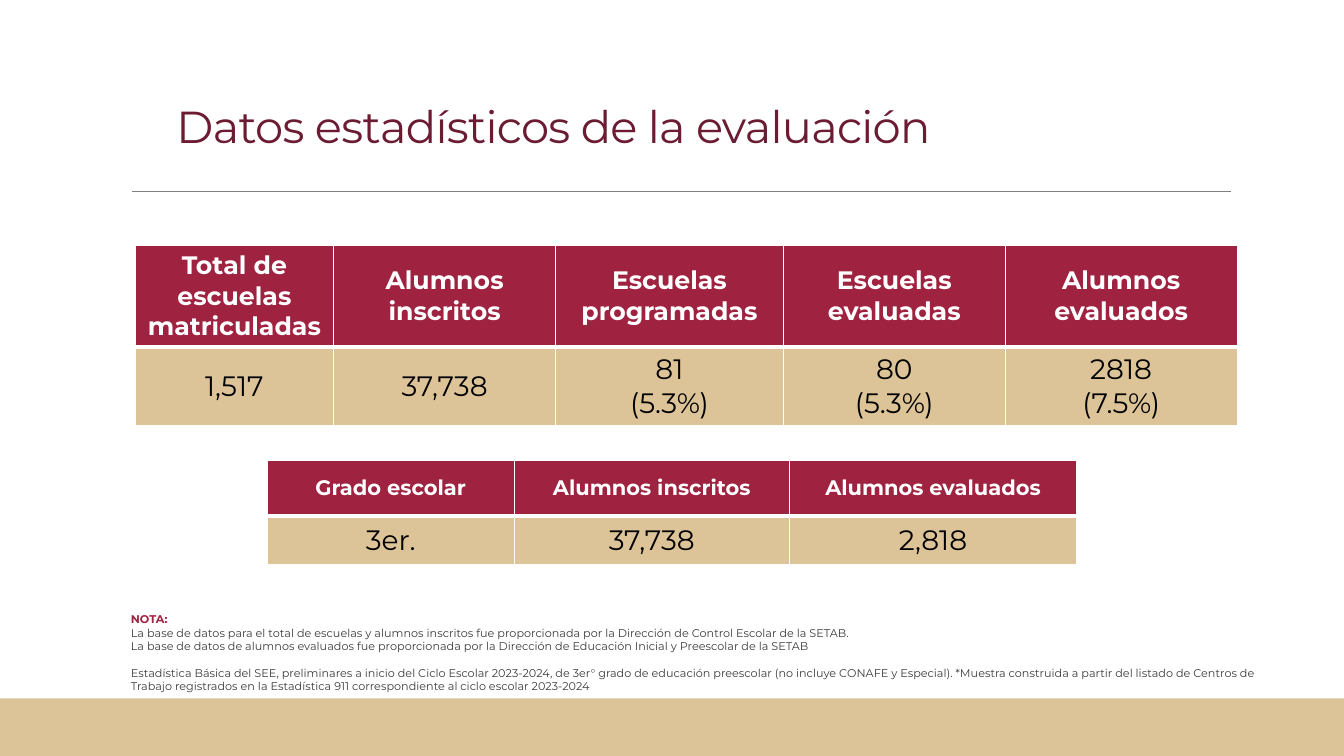
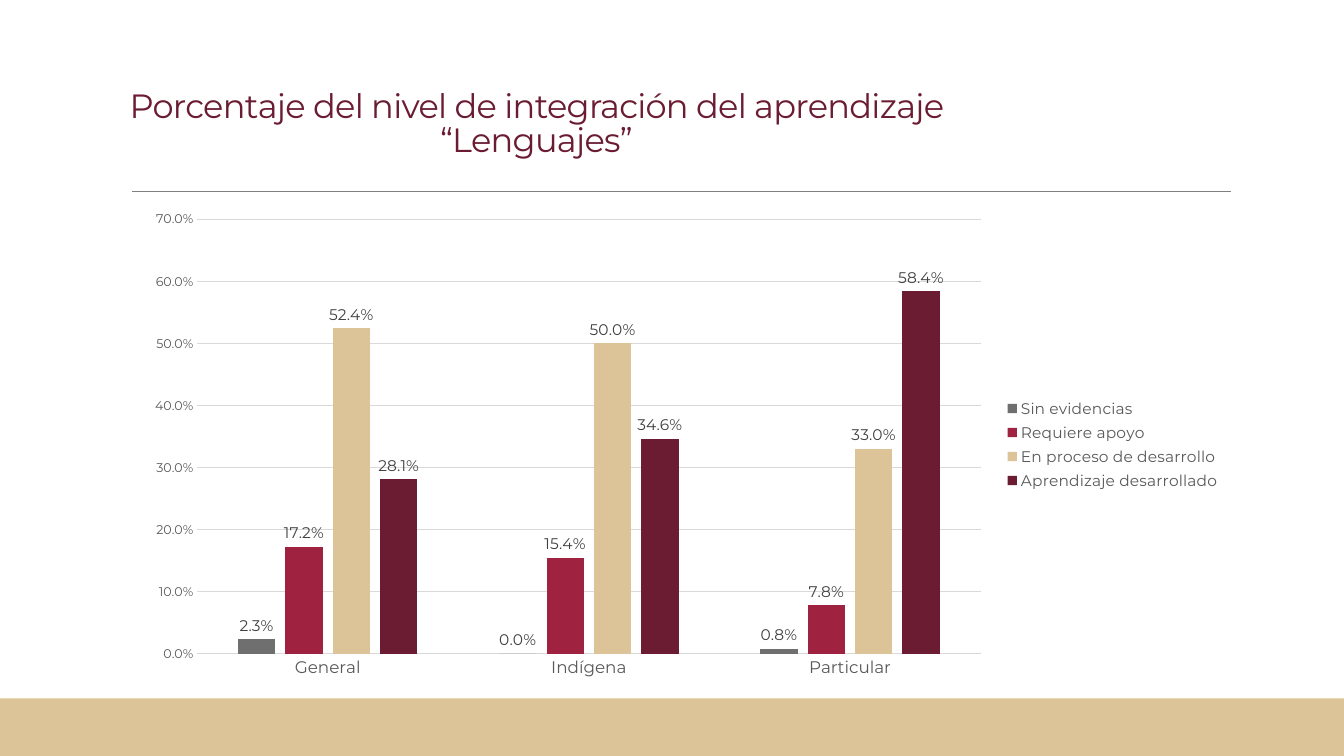
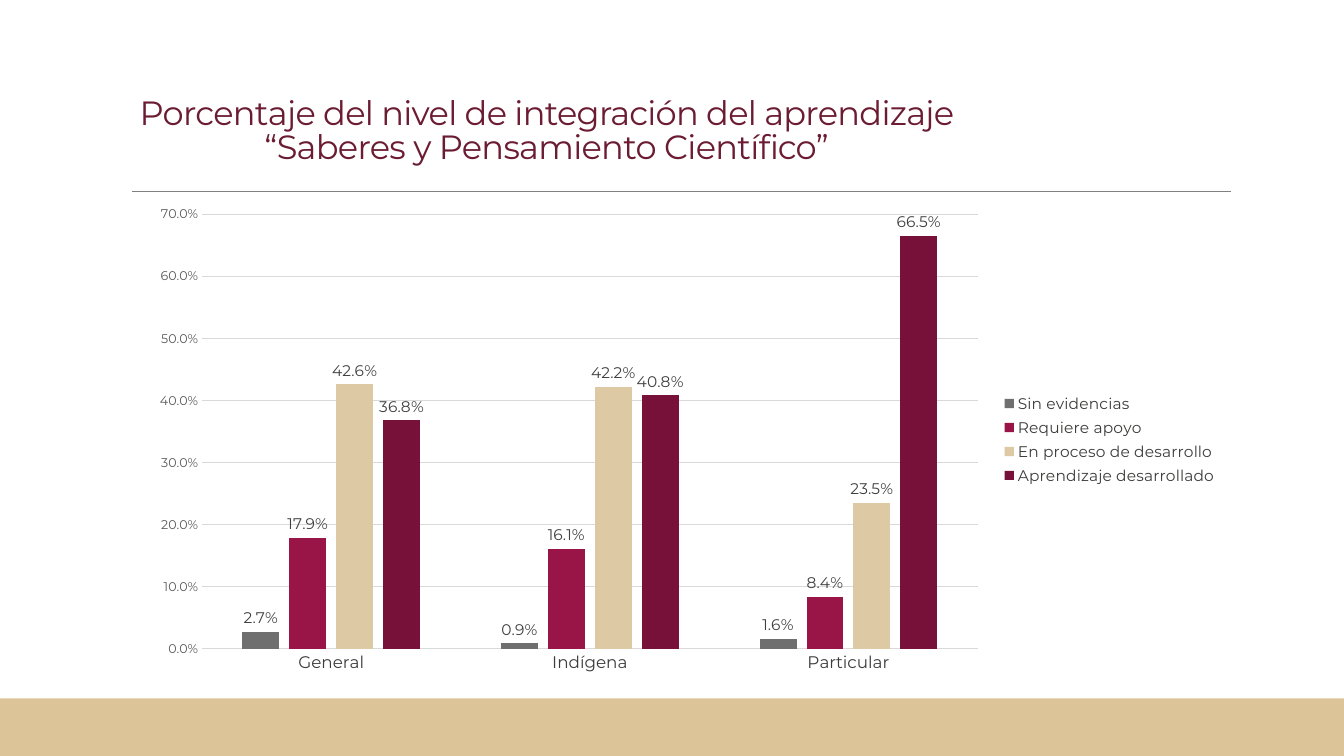
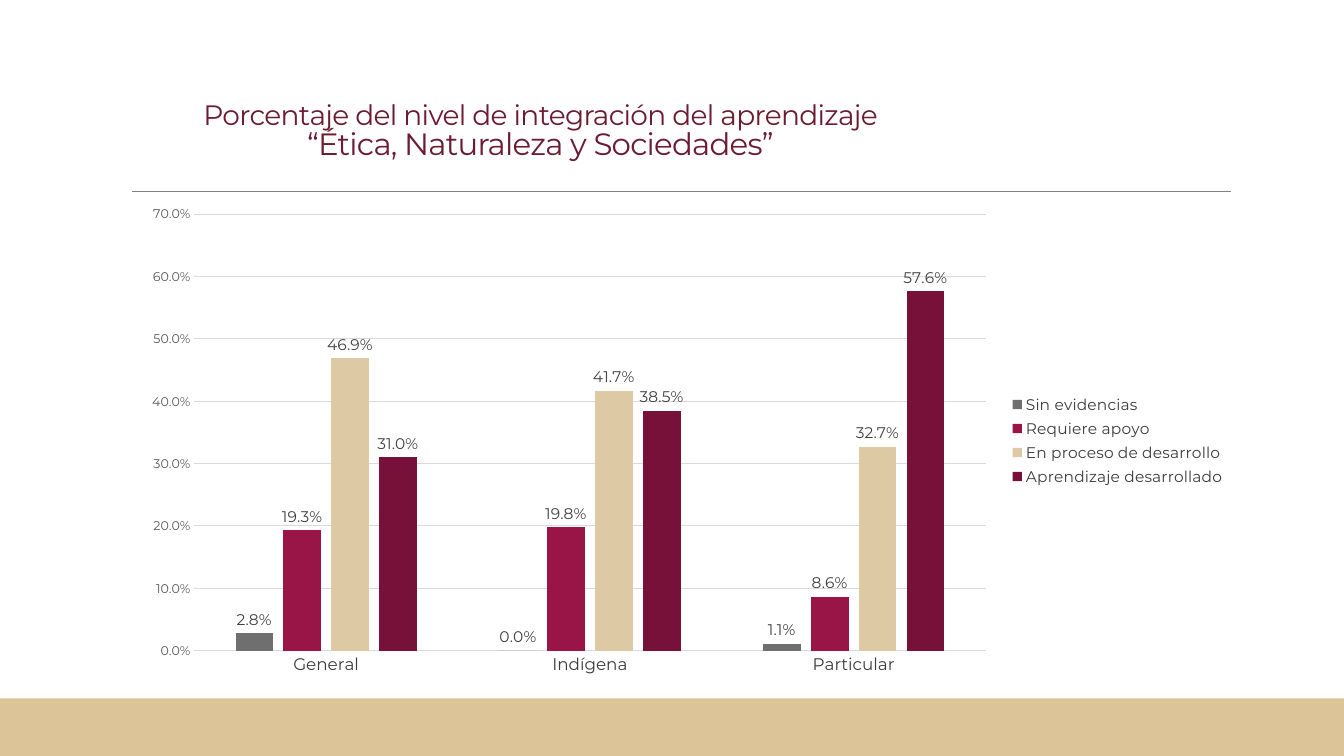
"""Build the four slides on the results of the preschool evaluation."""
from dataclasses import dataclass

from lxml.etree import SubElement
from pptx import Presentation
from pptx.chart.data import CategoryChartData
from pptx.dml.color import RGBColor
from pptx.enum.chart import XL_CHART_TYPE, XL_LABEL_POSITION, XL_LEGEND_POSITION, XL_TICK_MARK
from pptx.enum.shapes import MSO_CONNECTOR, MSO_SHAPE
from pptx.enum.text import MSO_ANCHOR, MSO_AUTO_SIZE, PP_ALIGN
from pptx.oxml.ns import qn
from pptx.util import Emu, Pt

EMU_PER_PX = 9144
SLIDE_WIDTH, SLIDE_HEIGHT = 1333, 750
FONT = "Montserrat"
PERCENT = "0.0%"
COLORS = {
    "white": "FFFFFF",
    "black": "000000",
    "band": "DDC398",
    "rule": "808080",
    "wine": "6B1C32",
    "crimson": "9F2240",
    "plum": "771139",
    "raspberry": "991547",
    "sand": "DDC9A3",
    "gray": "706F6F",
    "ink": "3C3C3B",
    "label": "404040",
    "axis": "595959",
    "grid": "D9D9D9",
}
CATEGORIES = ("General", "Indígena", "Particular")
LEVELS = ("Sin evidencias", "Requiere apoyo", "En proceso de desarrollo", "Aprendizaje desarrollado")
WARM_PALETTE = ("gray", "crimson", "band", "wine")
ROSE_PALETTE = ("gray", "raspberry", "sand", "plum")


@dataclass(frozen=True)
class Box:
    """Place and size in px."""

    left: int
    top: int
    width: int
    height: int

    def emu(self) -> tuple[Emu, ...]:
        """Return the four lengths in EMU."""
        return tuple(px(length) for length in (self.left, self.top, self.width, self.height))


@dataclass(frozen=True)
class Title:
    """Slide title, one (text, size) pair for each forced line."""

    box: Box
    lines: tuple[tuple[str, int], ...]
    anchor: MSO_ANCHOR = MSO_ANCHOR.BOTTOM


@dataclass(frozen=True)
class DataTable:
    """Table with one header row and one row of values."""

    left: int
    top: int
    columns: tuple[int, ...]
    rows: tuple[int, ...]
    header_size: int
    header: tuple[str, ...]
    values: tuple[str, ...]


@dataclass(frozen=True)
class LevelChart:
    """Column chart of the learning levels."""

    box: Box
    palette: tuple[str, ...]
    text_color: str
    values: tuple[tuple[float, ...], ...]


BAND_BOX = Box(0, 693, SLIDE_WIDTH, 57)
TABLES = (
    DataTable(
        134, 243, (197, 220, 226, 220, 230), (101, 77), 18,
        ("Total de escuelas matriculadas", "Alumnos inscritos", "Escuelas programadas",
         "Escuelas evaluadas", "Alumnos evaluados"),
        ("1,517", "37,738", "81\n(5.3%)", "80\n(5.3%)", "2818\n(7.5%)"),
    ),
    DataTable(
        265, 457, (245, 273, 285), (55, 48), 15,
        ("Grado escolar", "Alumnos inscritos", "Alumnos evaluados"),
        ("3er.", "37,738", "2,818"),
    ),
)
STATISTICS_TITLE = Title(
    Box(120, 76, 858, 106), (("Datos estadísticos de la evaluación", 32),), MSO_ANCHOR.MIDDLE
)
NOTE_BOX = Box(120, 603, 1164, 91)
NOTES = (
    "La base de datos para el total de escuelas y alumnos inscritos fue proporcionada por la "
    "Dirección de Control Escolar de la SETAB.",
    "La base de datos de alumnos evaluados fue proporcionada por la Dirección de Educación "
    "Inicial y Preescolar de la SETAB",
    "Estadística Básica del SEE, preliminares a inicio del Ciclo Escolar 2023-2024, de 3er° grado "
    "de educación preescolar (no incluye CONAFE y Especial). *Muestra construida a partir del "
    "listado de Centros de Trabajo registrados en la Estadística 911 correspondiente al ciclo "
    "escolar 2023-2024",
)
CHART_SLIDES = (
    (
        Title(Box(103, 57, 858, 106),
              (("Porcentaje del nivel de integración del aprendizaje “Lenguajes”", 24),)),
        LevelChart(Box(132, 200, 1089, 482), WARM_PALETTE, "axis",
                   ((0.023, 0, 0.008), (0.172, 0.154, 0.078),
                    (0.524, 0.5, 0.33), (0.281, 0.346, 0.584))),
    ),
    (
        Title(Box(111, 72, 862, 98),
              (("Porcentaje del nivel de integración del aprendizaje "
                "“Saberes y Pensamiento Científico”", 24),)),
        LevelChart(Box(137, 195, 1081, 482), ROSE_PALETTE, "ink",
                   ((0.027, 0.009, 0.016), (0.179, 0.161, 0.084),
                    (0.426, 0.422, 0.235), (0.368, 0.408, 0.665))),
    ),
    (
        Title(Box(116, 71, 840, 95),
              (("Porcentaje del nivel de integración del aprendizaje", 20),
               ("“Ética, Naturaleza y Sociedades”", 22))),
        LevelChart(Box(129, 195, 1097, 484), ROSE_PALETTE, "ink",
                   ((0.028, 0, 0.011), (0.193, 0.198, 0.086),
                    (0.469, 0.417, 0.327), (0.31, 0.385, 0.576))),
    ),
)


def px(length: int) -> Emu:
    """Turn px into EMU."""
    return Emu(length * EMU_PER_PX)


def color(name: str) -> RGBColor:
    """Look up a colour by name."""
    return RGBColor.from_string(COLORS[name])


def style_font(font, size: int, color_name: str, bold: bool = False) -> None:
    """Set the typeface, size, colour and weight of a font."""
    font.name = FONT
    font.size = Pt(size)
    font.bold = bold
    font.color.rgb = color(color_name)


def add_run(paragraph, text: str, size: int, color_name: str, bold: bool = False):
    """Append one formatted run and return it."""
    run = paragraph.add_run()
    run.text = text
    style_font(run.font, size, color_name, bold)
    return run


def add_shared_parts(slide) -> None:
    """Draw the rule and bottom band and hand them to the layout of the slide."""
    rule = slide.shapes.add_connector(
        MSO_CONNECTOR.STRAIGHT, px(131), px(190), px(1221), px(190)
    )
    rule.line.color.rgb = color("rule")
    rule.line.width = Pt(0.5)
    SubElement(rule.element.spPr, qn("a:effectLst"))
    band = slide.shapes.add_shape(MSO_SHAPE.RECTANGLE, *BAND_BOX.emu())
    band.shadow.inherit = False
    band.fill.solid()
    band.fill.fore_color.rgb = color("band")
    band.line.fill.background()
    for shape in (rule, band):
        slide.slide_layout.shapes.element.append(shape.element)


def set_title(slide, title: Title) -> None:
    """Place and fill the title placeholder."""
    shape = slide.shapes.title
    shape.left, shape.top, shape.width, shape.height = title.box.emu()
    frame = shape.text_frame
    frame.word_wrap = True
    frame.auto_size = MSO_AUTO_SIZE.NONE
    frame.vertical_anchor = title.anchor
    paragraph = frame.paragraphs[0]
    paragraph.alignment = PP_ALIGN.CENTER
    paragraph.line_spacing = 0.85
    for index, (text, size) in enumerate(title.lines):
        if index:
            paragraph.add_line_break()
        run = add_run(paragraph, text, size, "wine")
        run._r.get_or_add_rPr().set("spc", "-50")


def set_borders(cell, top: int, bottom: int) -> None:
    """Give a cell white borders with the given top and bottom widths in points."""
    properties = cell._tc.get_or_add_tcPr()
    widths = {"a:lnL": 1, "a:lnR": 1, "a:lnT": top, "a:lnB": bottom}
    for position, (tag, width) in enumerate(widths.items()):
        line = SubElement(properties, qn(tag), w=str(Pt(width)))
        fill = SubElement(line, qn("a:solidFill"))
        SubElement(fill, qn("a:srgbClr"), val=COLORS["white"])
        properties.insert(position, line)


def fill_cell(cell, text: str, size: int, is_header: bool) -> None:
    """Write and format one table cell."""
    cell.fill.solid()
    cell.fill.fore_color.rgb = color("crimson" if is_header else "band")
    cell.vertical_anchor = MSO_ANCHOR.MIDDLE
    set_borders(cell, top=1 if is_header else 3, bottom=3 if is_header else 1)
    frame = cell.text_frame
    for index, line in enumerate(text.split("\n")):
        paragraph = frame.add_paragraph() if index else frame.paragraphs[0]
        paragraph.alignment = PP_ALIGN.CENTER
        add_run(paragraph, line, size, "white" if is_header else "black", is_header)


def add_data_table(slide, data: DataTable) -> None:
    """Add a header and value table."""
    box = Box(data.left, data.top, sum(data.columns), sum(data.rows))
    table = slide.shapes.add_table(len(data.rows), len(data.columns), *box.emu()).table
    for column, width in zip(table.columns, data.columns):
        column.width = px(width)
    for row, height in zip(table.rows, data.rows):
        row.height = px(height)
    for index, (heading, value) in enumerate(zip(data.header, data.values)):
        fill_cell(table.cell(0, index), heading, data.header_size, True)
        fill_cell(table.cell(1, index), value, 20, False)


def add_notes_box(slide) -> None:
    """Add the small print under the tables."""
    frame = slide.shapes.add_textbox(*NOTE_BOX.emu()).text_frame
    frame.word_wrap = True
    add_run(frame.paragraphs[0], "NOTA:", 8, "crimson", True)
    for note in NOTES:
        paragraph = frame.add_paragraph()
        add_run(paragraph, note, 8, "ink")
    paragraph.space_before = Pt(9.5)


def style_axes(chart, text_color: str) -> None:
    """Format both axes and the gridlines."""
    category_axis, value_axis = chart.category_axis, chart.value_axis
    for axis, size, name in ((category_axis, 12, text_color), (value_axis, 9, "axis")):
        axis.major_tick_mark = XL_TICK_MARK.NONE
        axis.minor_tick_mark = XL_TICK_MARK.NONE
        style_font(axis.tick_labels.font, size, name)
    value_axis.has_major_gridlines = True
    for line in (category_axis.format.line, value_axis.major_gridlines.format.line):
        line.color.rgb = color("grid")
        line.width = Pt(0.75)
    value_axis.format.line.fill.background()
    value_axis.minimum_scale = 0
    value_axis.maximum_scale = 0.7
    value_axis.major_unit = 0.1
    value_axis.tick_labels.number_format = PERCENT
    value_axis.tick_labels.number_format_is_linked = False


def style_series(series, color_name: str) -> None:
    """Colour one series and label its columns."""
    series.format.fill.solid()
    series.format.fill.fore_color.rgb = color(color_name)
    series.invert_if_negative = False
    labels = series.data_labels
    labels.show_value = True
    labels.position = XL_LABEL_POSITION.OUTSIDE_END
    labels.number_format = PERCENT
    labels.number_format_is_linked = False
    style_font(labels.font, 11, "label")


def add_level_chart(slide, data: LevelChart) -> None:
    """Add a clustered column chart of the learning levels."""
    chart_data = CategoryChartData(number_format=PERCENT)
    chart_data.categories = CATEGORIES
    for level, values in zip(LEVELS, data.values):
        chart_data.add_series(level, values)
    chart = slide.shapes.add_chart(
        XL_CHART_TYPE.COLUMN_CLUSTERED, *data.box.emu(), chart_data
    ).chart
    chart.has_title = False
    chart.font.name = "Calibri"
    chart.font.size = Pt(10)
    chart.font.color.rgb = color("black")
    chart.has_legend = True
    chart.legend.position = XL_LEGEND_POSITION.RIGHT
    chart.legend.include_in_layout = False
    style_font(chart.legend.font, 11, data.text_color)
    style_axes(chart, data.text_color)
    plot = chart.plots[0]
    plot.gap_width = 219
    plot.overlap = -27
    plot.vary_by_categories = False
    for series, color_name in zip(plot.series, data.palette):
        style_series(series, color_name)


def main() -> None:
    """Build and save the presentation."""
    presentation = Presentation()
    presentation.slide_width = px(SLIDE_WIDTH)
    presentation.slide_height = px(SLIDE_HEIGHT)
    title_only = presentation.slide_layouts.get_by_name("Title Only")
    slide = presentation.slides.add_slide(title_only)
    add_shared_parts(slide)
    set_title(slide, STATISTICS_TITLE)
    for table in TABLES:
        add_data_table(slide, table)
    add_notes_box(slide)
    for title, chart in CHART_SLIDES:
        slide = presentation.slides.add_slide(title_only)
        set_title(slide, title)
        add_level_chart(slide, chart)
    presentation.save("out.pptx")


if __name__ == "__main__":
    main()
